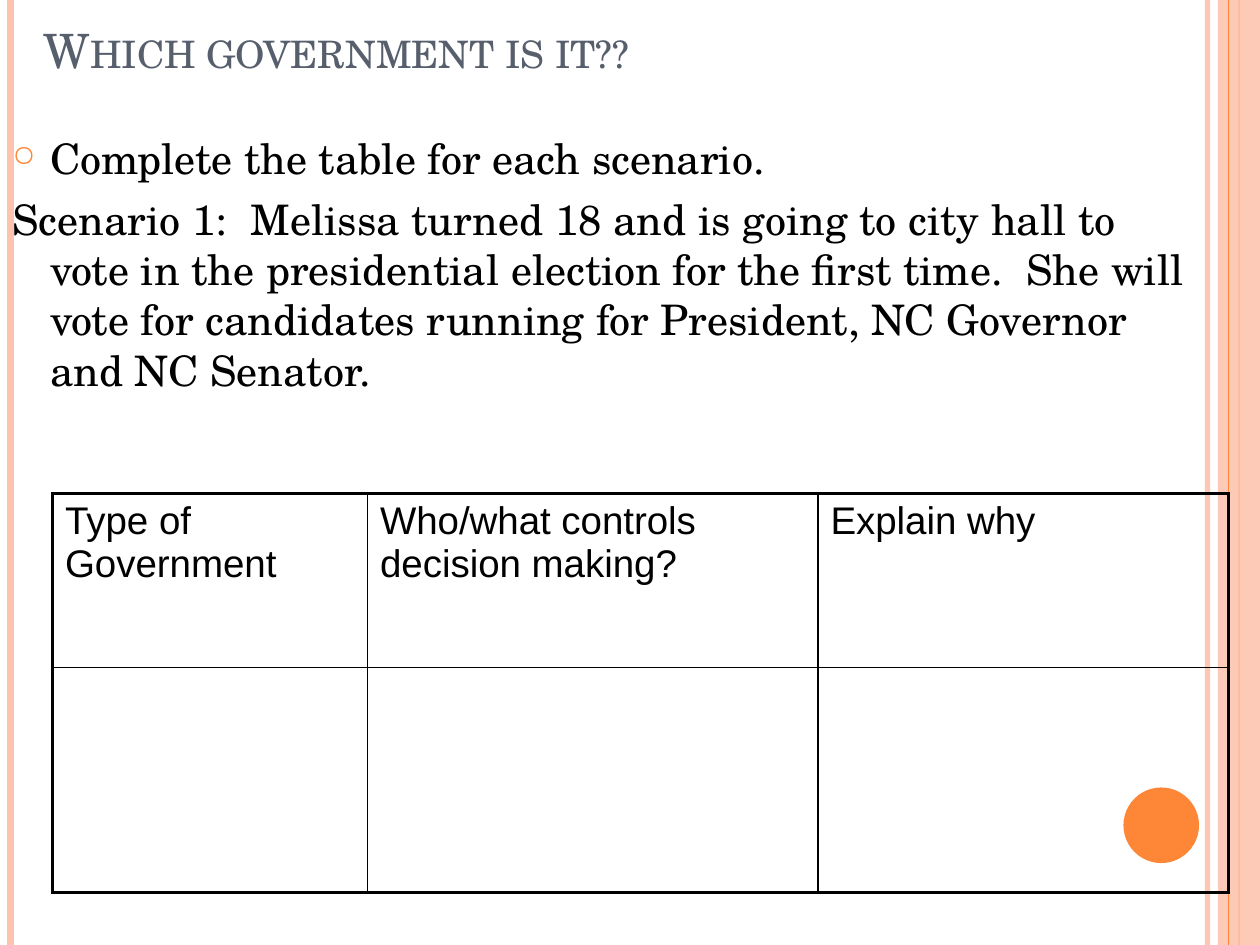
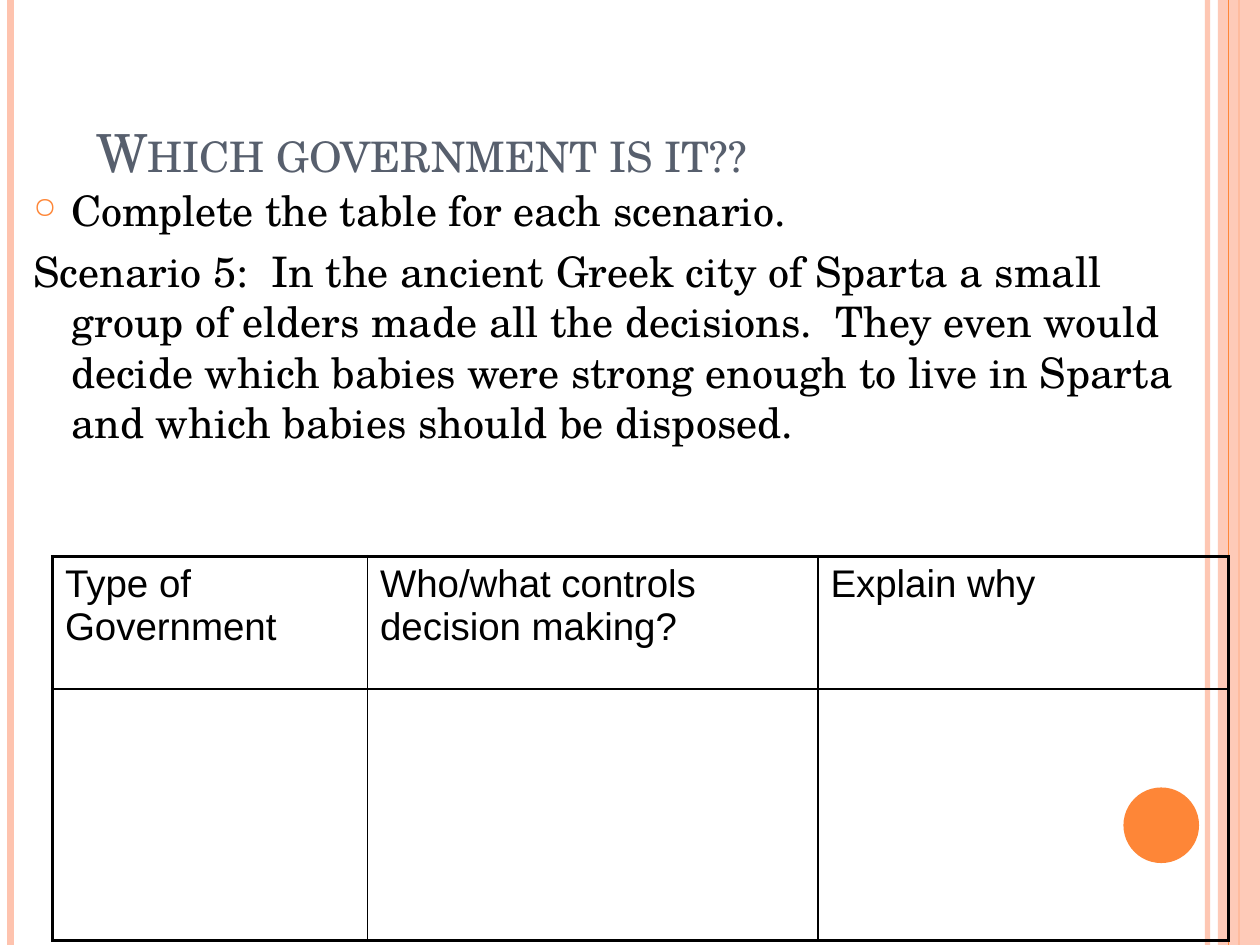
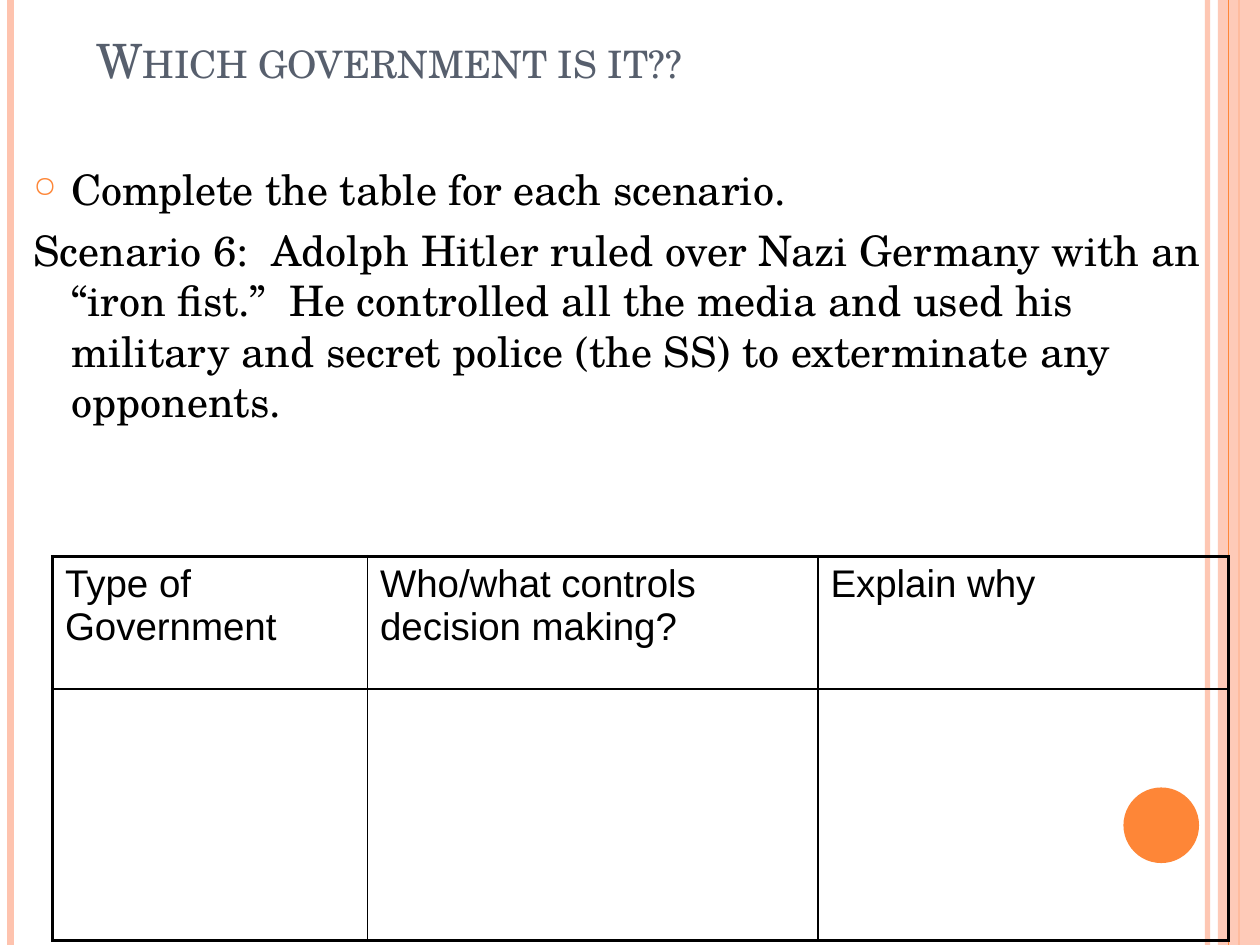
"""Builds three worksheet slides on kinds of government."""
from typing import NamedTuple

from lxml import etree
from pptx import Presentation
from pptx import util as u
from pptx.dml import color
from pptx.enum import shapes, text
from pptx.oxml import ns

COLS, ROWS = 120, 90
WIDE, HIGH = u.Inches(10), u.Inches(7.5)
PEACH, FLAME, SLATE, INK = "FEC3AE", "FE8637", "575F6D", "000000"
SERIF, SANS = "TeX Gyre Schola", "Arial"
TITLE = "Which government is it??"
TASK = "Complete the table for each scenario."
HEADS = ("Type of Government", "Who/what controls decision making?", "Explain why")
SPANS = (30, 42.9, 39.1)
THICK, THIN = 2.25, 1


class Box(NamedTuple):
    x: float
    y: float
    w: float
    h: float


class Rule(NamedTuple):
    x: float
    tone: str
    width: float
    alpha: int = 100


class Page(NamedTuple):
    title: Box
    size: int
    body: Box
    tale: str
    top: float
    rows: tuple[float, float]


BACK = (Rule(115, PEACH, 3, 93), Rule(1, PEACH, 4.5), Rule(118, FLAME, 1.5))
BAND, EDGE = Box(116, 0, 4, ROWS), Rule(117, FLAME, 0.75)
DOT = Box(107, 75, 7.2, 7.2)
PAGES = (
    Page(Box(3, 3, 112, 5), 27, Box(0, 12, 115, 78),
         "Scenario 1:  Melissa turned 18 and is going to city hall to vote in the "
         "presidential election for the first time.  She will vote for candidates "
         "running for President, NC Governor and NC Senator.",
         47, (16.6, 21.4)),
    Page(Box(8, 3, 102, 15), 30, Box(2, 17, 115, 49),
         "Scenario 5:  In the ancient Greek city of Sparta a small group of elders "
         "made all the decisions.  They even would decide which babies were strong "
         "enough to live in Sparta and which babies should be disposed.",
         53, (12.6, 24)),
    Page(Box(8, 3, 102, 6), 27, Box(2, 15, 115, 54),
         "Scenario 6:  Adolph Hitler ruled over Nazi Germany with an “iron fist.”  "
         "He controlled all the media and used his military and secret police "
         "(the SS) to exterminate any opponents.",
         53, (12.6, 24)),
)


def across(n: float) -> int:
    return round(WIDE * n / COLS)


def down(n: float) -> int:
    return round(HIGH * n / ROWS)


def place(box: Box) -> tuple[int, int, int, int]:
    return across(box.x), down(box.y), across(box.w), down(box.h)


def rgb(tone: str) -> color.RGBColor:
    return color.RGBColor.from_string(tone)


def node(root, tag: str, **attrs):
    return etree.SubElement(root, ns.qn(tag), attrs)


def apply(item, **style) -> None:
    for key, value in style.items():
        setattr(item, key, value)


def fade(root, alpha: int) -> None:
    if alpha < 100:
        node(next(root.iter(ns.qn("a:srgbClr"))), "a:alpha", val=str(alpha * 1000))


def stripe(slide, rule: Rule) -> None:
    x = across(rule.x)
    line = slide.shapes.add_connector(shapes.MSO_CONNECTOR.STRAIGHT, x, 0, x, HIGH)
    line.line.color.rgb = rgb(rule.tone)
    line.line.width = u.Pt(rule.width)
    props = line._element.spPr
    fade(props, rule.alpha)
    node(props, "a:effectLst")


def shape(slide, kind, box: Box, tone: str, alpha: int = 100) -> None:
    item = slide.shapes.add_shape(kind, *place(box))
    item.shadow.inherit = False
    item.fill.solid()
    item.fill.fore_color.rgb = rgb(tone)
    item.line.fill.background()
    fade(item._element.spPr, alpha)


def write(para, words: str, size: float, face: str, tone: str):
    run = para.add_run()
    run.text = words
    apply(run.font, size=u.Pt(size), name=face, bold=False)
    run.font.color.rgb = rgb(tone)
    return run


def frame(slide, box: Box, anchor):
    area = slide.shapes.add_textbox(*place(box)).text_frame
    apply(area, word_wrap=True, vertical_anchor=anchor)
    return area


def head(slide, page: Page) -> None:
    area = frame(slide, page.title, text.MSO_ANCHOR.BOTTOM)
    run = write(area.paragraphs[0], TITLE, page.size, SERIF, SLATE)
    run.font._element.set("cap", "small")


def body(slide, page: Page) -> None:
    area = frame(slide, page.body, text.MSO_ANCHOR.TOP)
    first, last = area.paragraphs[0], area.add_paragraph()
    for para, words in ((first, TASK), (last, page.tale)):
        write(para, words, 24, SERIF, INK)
        para.space_before = u.Pt(6)
        props = para._p.get_or_add_pPr()
        props.set("marL", str(u.Inches(0.3)))
        props.set("indent", str(-u.Inches(0.3)))
    props = first._p.pPr
    node(node(props, "a:buClr"), "a:srgbClr", val=FLAME)
    node(props, "a:buSzPct", val="70000")
    node(props, "a:buChar", char="○")


def border(cell, sides: dict[str, float]) -> None:
    props = cell._tc.get_or_add_tcPr()
    for side, width in sides.items():
        line = node(props, f"a:ln{side}", w=str(u.Pt(width)))
        node(node(line, "a:solidFill"), "a:srgbClr", val=INK)


def table(slide, page: Page) -> None:
    box = Box(5, page.top, sum(SPANS), sum(page.rows))
    rows, cols = len(page.rows), len(SPANS)
    grid = slide.shapes.add_table(rows, cols, *place(box)).table
    apply(grid, first_row=False, horz_banding=False)
    for col, span in zip(grid.columns, SPANS):
        col.width = across(span)
    for row, span in zip(grid.rows, page.rows):
        row.height = down(span)
    for r in range(rows):
        for c in range(cols):
            cell = grid.cell(r, c)
            outer = {"L": c == 0, "R": c == cols - 1, "T": r == 0, "B": r == rows - 1}
            border(cell, {k: THICK if out else THIN for k, out in outer.items()})
            cell.fill.background()
    for c, words in enumerate(HEADS):
        write(grid.cell(0, c).text_frame.paragraphs[0], words, 22, SANS, INK)


def decor(slide) -> None:
    for rule in BACK:
        stripe(slide, rule)
    shape(slide, shapes.MSO_SHAPE.RECTANGLE, BAND, PEACH, 87)
    stripe(slide, EDGE)
    shape(slide, shapes.MSO_SHAPE.OVAL, DOT, FLAME)


def main() -> None:
    deck = Presentation()
    apply(deck, slide_width=WIDE, slide_height=HIGH)
    for page in PAGES:
        slide = deck.slides.add_slide(deck.slide_layouts[6])
        decor(slide)
        for draw in (head, body, table):
            draw(slide, page)
    deck.save("out.pptx")


if __name__ == "__main__":
    main()
